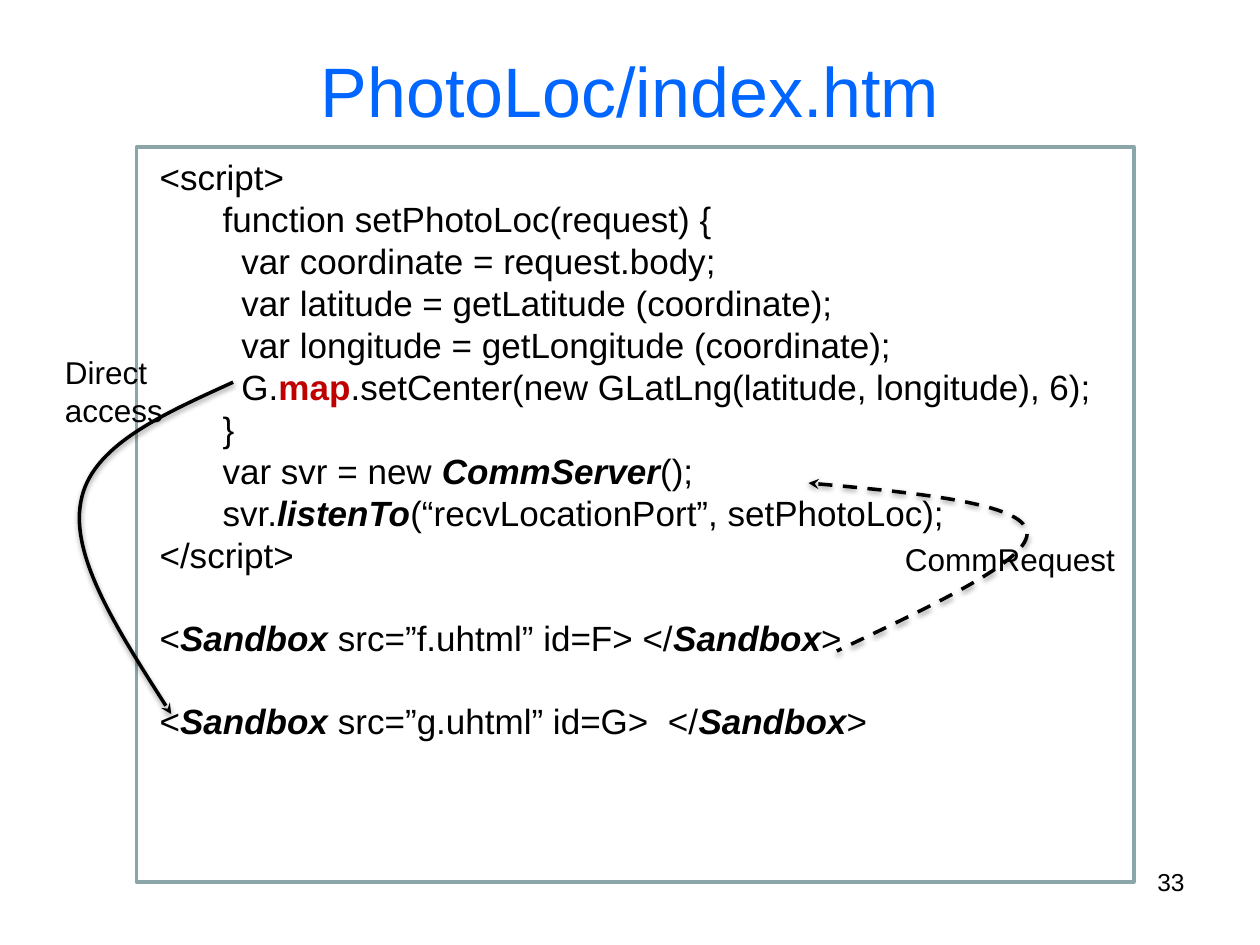
from lxml import etree
from pptx import Presentation
from pptx.dml.color import RGBColor
from pptx.enum.dml import MSO_LINE
from pptx.enum.shapes import MSO_SHAPE
from pptx.enum.text import MSO_ANCHOR, MSO_AUTO_SIZE, PP_ALIGN
from pptx.oxml import parse_xml
from pptx.oxml.ns import qn
from pptx.util import Inches, Pt

RECT = MSO_SHAPE.RECTANGLE
DASH = MSO_LINE.DASH
MIDDLE, TOP = MSO_ANCHOR.MIDDLE, MSO_ANCHOR.TOP
NO_FIT = MSO_AUTO_SIZE.NONE
LEFT, CENTER, RIGHT = PP_ALIGN.LEFT, PP_ALIGN.CENTER, PP_ALIGN.RIGHT

FONT = "Arial"
BLACK, BLUE, RED, FRAME = "000000", "0066FF", "C00000", "8AA6A8"
CELL = Inches(1) / 12  # the slide is a grid of 120 columns by 90 rows

SHADOW = (
    '<a:effectLst xmlns:a="http://schemas.openxmlformats.org/drawingml/2006/main">'
    '<a:outerShdw blurRad="40000" dist="20000" dir="5400000" rotWithShape="0">'
    '<a:srgbClr val="000000"><a:alpha val="38000"/></a:srgbClr>'
    '</a:outerShdw></a:effectLst>'
)

# Code lines: indent in inches, blank lines above, text with *emphasis* and ^highlight^
CODE = [
    (0, 0, "<script>"),
    (0.5, 0, "function setPhotoLoc(request) {"),
    (0.65, 0, "var coordinate = request.body;"),
    (0.65, 0, "var latitude = getLatitude (coordinate);"),
    (0.65, 0, "var longitude = getLongitude (coordinate);"),
    (0.65, 0, "G.^map^.setCenter(new GLatLng(latitude, longitude), 6);"),
    (0.5, 0, "}"),
    (0.5, 0, "var svr = new *CommServer*();"),
    (0.5, 0, "svr.*listenTo*(“recvLocationPort”, setPhotoLoc);"),
    (0, 0, "</script>"),
    (0, 1, "<*Sandbox *src=”f.uhtml” id=F> </*Sandbox*>"),
    (0, 1, "<*Sandbox *src=”g.uhtml” id=G>  </*Sandbox*>"),
]
LINE_PITCH, LINE_GAP = 23.2, 4.8

DIRECT_CURVE = [(22.2, 36.4), (15.4, 39.5), (8.6, 42.5), (7.7, 47.8),
                (6.7, 53), (11.5, 60.5), (16.3, 68)]
REQUEST_CURVE = [(77, 46), (87.2, 46.9), (97.4, 48), (97.8, 50.6),
                 (98.3, 53.3), (88.9, 57.6), (79.7, 62)]


def rgb(value):
    return RGBColor.from_string(value)


def cells(*values):
    return [round(v * CELL) for v in values]


def place(sp, box):
    sp.left, sp.top, sp.width, sp.height = cells(*box)


def style(r, size, color=BLACK, bold=False, italic=False):
    r.font.name, r.font.size = FONT, Pt(size)
    r.font.bold, r.font.italic = bold, italic
    r.font.color.rgb = rgb(color)


def add_title(slide, box, text):
    sp = slide.shapes.title
    place(sp, box)
    tf = sp.text_frame
    tf.text = text
    tf.vertical_anchor = MIDDLE
    tf.paragraphs[0].alignment = CENTER
    style(tf.paragraphs[0].runs[0], 40, BLUE)


def add_marked_runs(p, text):
    """Split the text at its marks: * is bold italic, ^ is bold red."""
    for i, part in enumerate(text.replace("^", "*").split("*")):
        marked = i % 2 == 1
        red = marked and "^" in text
        r = p.add_run()
        r.text = part
        style(r, 20, RED if red else BLACK, marked, marked and not red)


def add_code(slide, box):
    sp = slide.placeholders[1]
    place(sp, box)
    tf = sp.text_frame
    tf.auto_size, tf.vertical_anchor = NO_FIT, TOP
    for i, (indent, blanks, text) in enumerate(CODE):
        p = tf.paragraphs[0] if i == 0 else tf.add_paragraph()
        p.line_spacing = 0.8
        p.space_before = Pt(LINE_GAP + blanks * LINE_PITCH)
        p.alignment = LEFT
        pPr = p._p.get_or_add_pPr()
        pPr.set("marL", str(Inches(indent)))
        pPr.set("indent", "0")
        etree.SubElement(pPr, qn("a:buNone"))
        add_marked_runs(p, text)


def add_frame(slide, box):
    sp = slide.shapes.add_shape(RECT, *cells(*box))
    sp.shadow.inherit = False
    sp.fill.background()
    sp.line.color.rgb = rgb(FRAME)
    sp.line.width = Pt(2)


def add_label(slide, box, lines, size=18, align=LEFT):
    tf = slide.shapes.add_textbox(*cells(*box)).text_frame
    tf.text = "\n".join(lines)
    for p in tf.paragraphs:
        p.alignment = align
        style(p.runs[0], size)
    tf.word_wrap = align == RIGHT


def add_curved_arrow(slide, points, end, dash=None):
    """Draw Bezier pieces through the points; end is headEnd or tailEnd."""
    start, *rest = [cells(*point) for point in points]
    builder = slide.shapes.build_freeform(*start)
    builder.add_line_segments(rest, close=False)
    sp = builder.convert_to_shape()
    sp.fill.background()
    sp.line.color.rgb = rgb(BLACK)
    sp.line.width = Pt(2)
    if dash:
        sp.line.dash_style = dash

    spPr = sp._element.spPr
    outline = spPr.find(".//" + qn("a:path"))
    segments = outline.findall(qn("a:lnTo"))
    for i in range(0, len(segments), 3):
        curve = etree.SubElement(outline, qn("a:cubicBezTo"))
        for segment in segments[i:i + 3]:
            curve.append(segment[0])
            outline.remove(segment)
    etree.SubElement(spPr.find(qn("a:ln")), qn("a:" + end), type="stealth")
    spPr.append(parse_xml(SHADOW))


def main():
    prs = Presentation()
    prs.slide_width, prs.slide_height = cells(120, 90)
    slide = prs.slides.add_slide(prs.slide_layouts[1])
    add_title(slide, (6, 1, 108, 15), "PhotoLoc/index.htm")
    add_code(slide, (14, 15, 95, 62.4))
    add_label(slide, (86, 82, 28, 6.2), ["33"], 14, RIGHT)
    add_frame(slide, (13, 14, 95, 70))
    add_curved_arrow(slide, DIRECT_CURVE, "tailEnd")
    add_label(slide, (5, 33, 11.9, 7.8), ["Direct", "access"])
    add_curved_arrow(slide, REQUEST_CURVE, "headEnd", DASH)
    add_label(slide, (85, 50.8, 36.6, 5.9), ["CommRequest"])
    prs.save("out.pptx")


if __name__ == "__main__":
    main()
